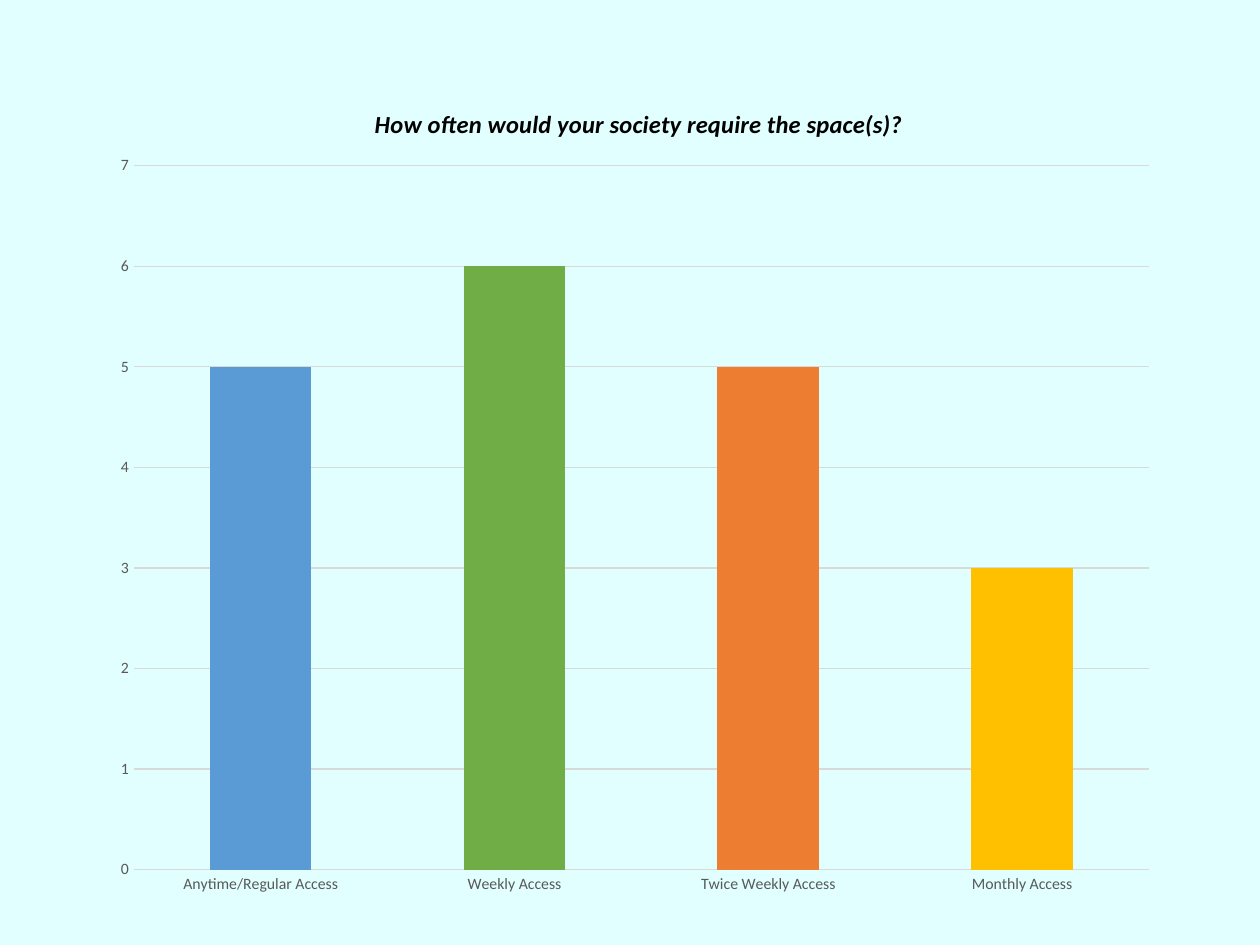
"""Build a slide with one column chart of how often societies need space."""
from typing import NamedTuple

from lxml import etree
from pptx import Presentation, util as u
from pptx.chart.data import CategoryChartData
from pptx.dml.color import RGBColor
from pptx.enum import chart as ch
from pptx.oxml.ns import qn

PALE_CYAN = RGBColor(0xE1, 0xFF, 0xFF)
BLACK = RGBColor(0, 0, 0)
GREY = RGBColor(0x59, 0x59, 0x59)
LIGHT_GREY = RGBColor(0xD9, 0xD9, 0xD9)
BLUE = RGBColor(0x5B, 0x9B, 0xD5)
GREEN = RGBColor(0x70, 0xAD, 0x47)
ORANGE = RGBColor(0xED, 0x7D, 0x31)
GOLD = RGBColor(0xFF, 0xC0, 0x00)
FONT = "Calibri"
TITLE = "How often would your society require the space(s)?"


class Answer(NamedTuple):
    label: str
    votes: int
    color: RGBColor


ANSWERS = [
    Answer("Anytime/Regular Access", 5, BLUE),
    Answer("Weekly Access", 6, GREEN),
    Answer("Twice Weekly Access", 5, ORANGE),
    Answer("Monthly Access", 3, GOLD),
]


def style_font(font, size: float, color: RGBColor) -> None:
    """Set the typeface, size and colour of a font."""
    font.name, font.size = FONT, u.Pt(size)
    font.color.rgb = color


def style_line(line) -> None:
    """Make a thin light grey line."""
    line.color.rgb, line.width = LIGHT_GREY, u.Pt(0.75)


def style_axis(axis) -> None:
    """Remove the tick marks and set the label font."""
    axis.major_tick_mark = axis.minor_tick_mark = ch.XL_TICK_MARK.NONE
    style_font(axis.tick_labels.font, 9, GREY)


def place(parent, index: int, percents: dict[str, float], inner: bool = False) -> None:
    """Give a chart part a manual layout in percent of the chart."""
    for old in parent.findall(qn("c:layout")):
        parent.remove(old)
    layout = etree.Element(qn("c:layout"))
    manual = etree.SubElement(layout, qn("c:manualLayout"))
    settings = {"layoutTarget": "inner"} if inner else {}
    settings |= {"xMode": "edge", "yMode": "edge"}
    settings |= {key: str(share / 100) for key, share in percents.items()}
    for key, val in settings.items():
        etree.SubElement(manual, qn(f"c:{key}")).set("val", val)
    parent.insert(index, layout)


def add_title(chart) -> None:
    """Write the chart title above the plot."""
    title = chart.chart_title
    title.text_frame.text = TITLE
    font = title.text_frame.paragraphs[0].runs[0].font
    style_font(font, 14, BLACK)
    font.bold = font.italic = True
    title.include_in_layout = False
    place(title._element, 1, {"x": 25.3, "y": 3.7})


def add_columns(s, prs) -> None:
    """Draw one coloured column for each answer."""
    data = CategoryChartData()
    data.categories = [a.label for a in ANSWERS]
    data.add_series("Series 1", [a.votes for a in ANSWERS])
    w, h = prs.slide_width, prs.slide_height
    frame = s.shapes.add_chart(
        ch.XL_CHART_TYPE.COLUMN_STACKED, int(0.079 * w), int(0.076 * h),
        int(0.849 * w), int(0.887 * h), data)
    chart = frame.chart
    chart.has_legend = False
    style_font(chart.font, 10, BLACK)
    add_title(chart)

    plot = chart.plots[0]
    plot.gap_width, plot.overlap, plot.vary_by_categories = 150, 100, False
    series = plot.series[0]
    series.format.fill.solid()
    series.format.fill.fore_color.rgb = BLUE
    for i, answer in enumerate(ANSWERS):
        fill = series.points[i].format.fill
        fill.solid()
        fill.fore_color.rgb = answer.color

    cat, val = chart.category_axis, chart.value_axis
    style_axis(cat)
    style_axis(val)
    style_line(cat.format.line)
    val.format.line.fill.background()
    val.minimum_scale, val.maximum_scale, val.major_unit = 0, 7, 1
    val.has_major_gridlines = True
    style_line(val.major_gridlines.format.line)
    area = chart._chartSpace.chart.plotArea
    place(area, 0, {"x": 3.2, "y": 11.2, "w": 94.9, "h": 84}, inner=True)


def main() -> None:
    """Create and save the presentation."""
    prs = Presentation()
    prs.slide_width, prs.slide_height = u.Inches(10), u.Inches(7.5)
    s = prs.slides.add_slide(prs.slide_layouts[6])
    s.background.fill.solid()
    s.background.fill.fore_color.rgb = PALE_CYAN
    add_columns(s, prs)
    prs.save("out.pptx")


if __name__ == "__main__":
    main()
